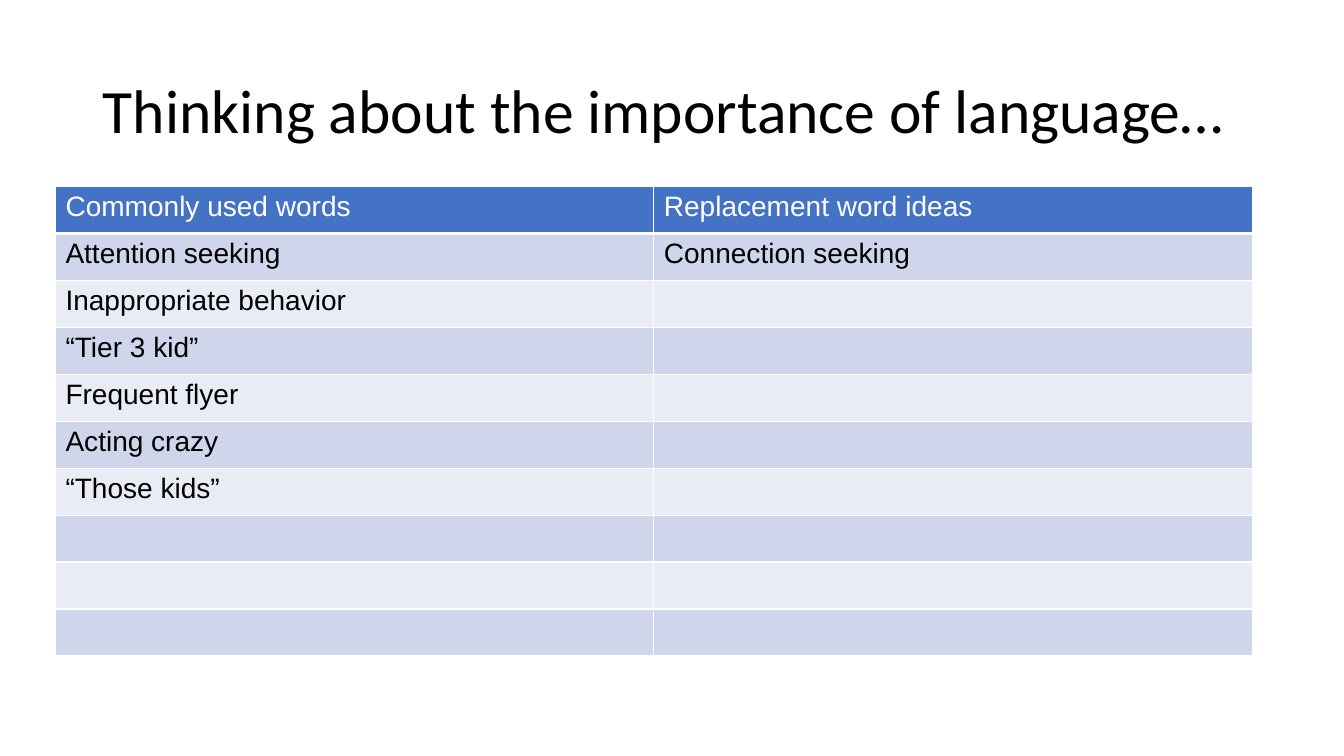
from lxml import etree
from pptx import Presentation
from pptx.dml.color import RGBColor
from pptx.enum.text import MSO_ANCHOR, PP_ALIGN
from pptx.oxml.ns import qn
from pptx.util import Pt

MIDDLE = MSO_ANCHOR.MIDDLE
LEFT = PP_ALIGN.LEFT
EMU_PER_PX = 9144
TITLE_ONLY = 5
WORDS = [
    ("Commonly used words", "Replacement word ideas"),
    ("Attention seeking", "Connection seeking"),
    ("Inappropriate behavior", ""),
    ("“Tier 3 kid”", ""),
    ("Frequent flyer", ""),
    ("Acting crazy", ""),
    ("“Those kids”", ""),
    ("", ""),
    ("", ""),
    ("", ""),
]
HEADER_FILL = "4472C4"
BAND_FILLS = ("E9EBF5", "CFD5EA")


def px(length):
    """Turn pixels into EMU."""
    return length * EMU_PER_PX


def color(code):
    """Turn a hex string into a colour."""
    return RGBColor.from_string(code)


def format_text(frame, font_name, size, code):
    """Format every run of a text frame."""
    for para in frame.paragraphs:
        para.alignment = LEFT
        for span in para.runs:
            span.font.name = font_name
            span.font.size = Pt(size)
            span.font.bold = False
            span.font.color.rgb = color(code)


def add_title(page, box, text):
    """Place and format the slide title."""
    title = page.shapes.title
    title.left, title.top, title.width, title.height = map(px, box)
    frame = title.text_frame
    frame.text = text
    frame.word_wrap = True
    frame.vertical_anchor = MIDDLE
    frame.paragraphs[0].line_spacing = 0.9
    format_text(frame, "Calibri", 44, "000000")


def add_borders(cell, code, bottom_width):
    """Draw the four borders of a table cell."""
    properties = cell._tc.get_or_add_tcPr()
    for side, width in (("L", 1), ("R", 1), ("T", 1), ("B", bottom_width)):
        line = etree.SubElement(properties, qn(f"a:ln{side}"), w=str(Pt(width)))
        fill = etree.SubElement(line, qn("a:solidFill"))
        etree.SubElement(fill, qn("a:srgbClr"), val=code)


def add_word_table(page, box, rows):
    """Fill the box with a banded table under a header row."""
    left, top, width, height = map(px, box)
    table = page.shapes.add_table(
        len(rows), len(rows[0]), left, top, width, height
    ).table
    for row_index, texts in enumerate(rows):
        is_header = row_index == 0
        fill = HEADER_FILL if is_header else BAND_FILLS[row_index % 2]
        for column_index, text in enumerate(texts):
            cell = table.cell(row_index, column_index)
            cell.text = text
            format_text(cell.text_frame, "Arial", 20,
                        "FFFFFF" if is_header else "000000")
            add_borders(cell, "FFFFFF", 3 if is_header else 1)
            cell.fill.solid()
            cell.fill.fore_color.rgb = color(fill)


def main():
    """Build and save the deck."""
    deck = Presentation()
    deck.slide_width, deck.slide_height = px(1333), px(750)
    page = deck.slides.add_slide(deck.slide_layouts[TITLE_ONLY])
    add_title(page, (92, 40, 1150, 145),
              "Thinking about the importance of language…")
    add_word_table(page, (55, 185, 1187, 466), WORDS)
    deck.save("out.pptx")


if __name__ == "__main__":
    main()
